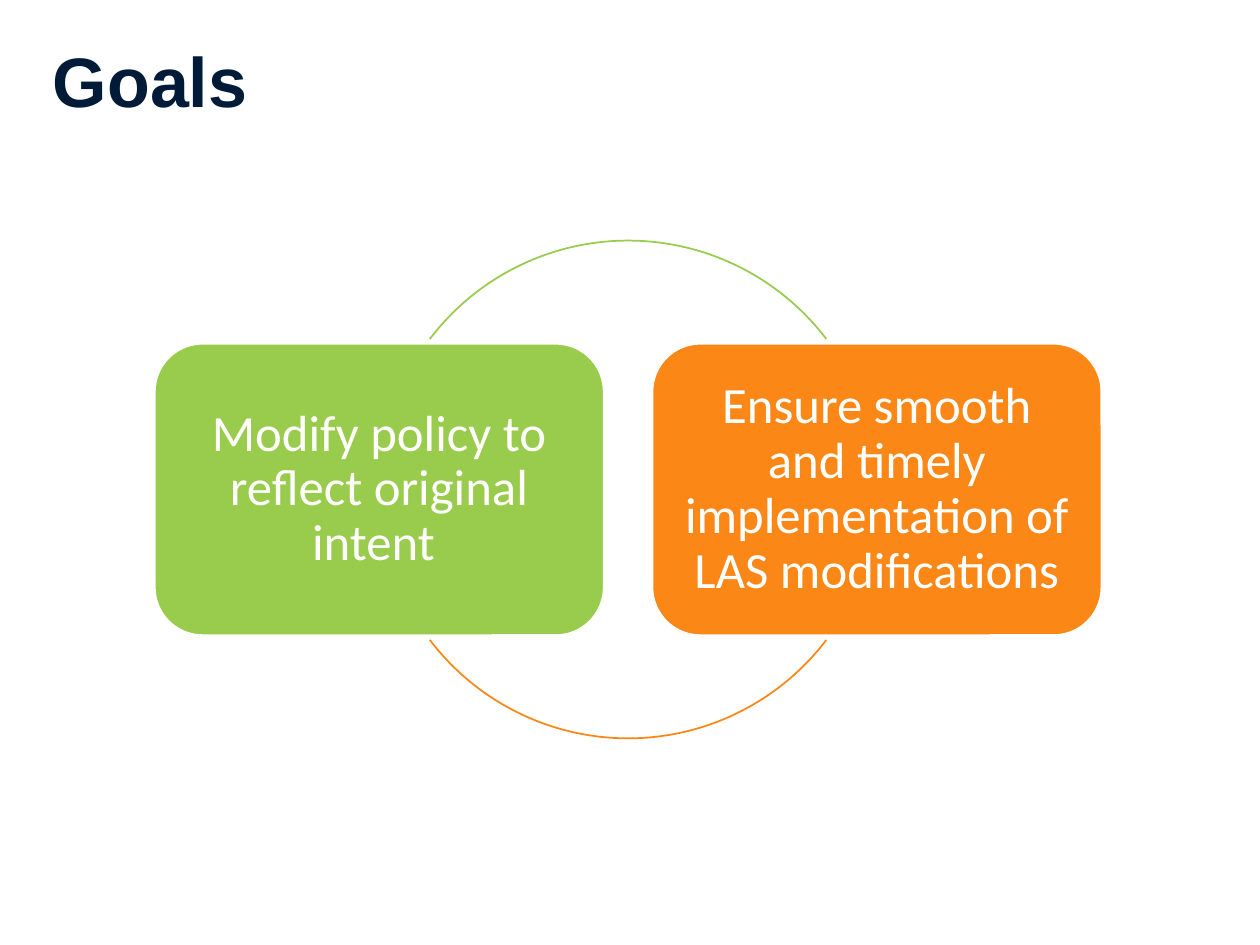
from pptx import Presentation
from pptx.dml.color import RGBColor
from pptx.enum.shapes import MSO_SHAPE
from pptx.enum.text import MSO_ANCHOR, PP_ALIGN
from pptx.util import Inches, Pt

TITLE = "Goals"
# text, colour, start and end angle of the arc in degrees, clockwise from the right
GOALS = [
    ("Modify policy to reflect original intent ", "green", 217.2, 322.8),
    ("Ensure smooth and timely implementation of LAS modifications", "orange", 37.2, 142.8),
]
THEME = {
    "green": RGBColor.from_string("99CC4C"),
    "orange": RGBColor.from_string("FA8716"),
    "navy": RGBColor.from_string("001B37"),
    "white": RGBColor.from_string("FFFFFF"),
    "title_font": "Arial", "title_size": Pt(40),
    "body_font": "Calibri", "body_size": Pt(29),
}
CENTER_X, CENTER_Y = 4.985, 3.885
DIAMETER = 3.95
BOX_W, BOX_H, BOX_GAP = 3.58, 2.33, 0.37
INSET = Inches(0.12)


def style_font(font, role, color, bold=False):
    font.name = THEME[f"{role}_font"]
    font.size = THEME[f"{role}_size"]
    font.color.rgb = THEME[color]
    font.bold = bold


def add_title(slide):
    sp = slide.shapes.title
    sp.left, sp.top, sp.width, sp.height = map(Inches, (0.32, 0.17, 9.56, 0.93))
    tf = sp.text_frame
    tf.text = TITLE
    tf.vertical_anchor = MSO_ANCHOR.MIDDLE
    p = tf.paragraphs[0]
    p.alignment = PP_ALIGN.LEFT
    style_font(p.runs[0].font, "title", "navy", bold=True)


def add_goal_box(slide, index, text, color):
    left = CENTER_X - BOX_W - BOX_GAP / 2 + index * (BOX_W + BOX_GAP)
    sp = slide.shapes.add_shape(
        MSO_SHAPE.ROUNDED_RECTANGLE, Inches(left), Inches(CENTER_Y - BOX_H / 2),
        Inches(BOX_W), Inches(BOX_H))
    sp.shadow.inherit = False
    sp.fill.solid()
    sp.fill.fore_color.rgb = THEME[color]
    sp.line.color.rgb = THEME["white"]
    sp.line.width = Pt(2.25)
    tf = sp.text_frame
    tf.text = text
    tf.word_wrap = True
    tf.vertical_anchor = MSO_ANCHOR.MIDDLE
    tf.margin_left = tf.margin_right = tf.margin_top = tf.margin_bottom = INSET
    p = tf.paragraphs[0]
    p.alignment = PP_ALIGN.CENTER
    p.line_spacing = 0.9
    style_font(p.runs[0].font, "body", "white")


def add_cycle_arc(slide, color, start, end):
    sp = slide.shapes.add_shape(
        MSO_SHAPE.ARC, Inches(CENTER_X - DIAMETER / 2), Inches(CENTER_Y - DIAMETER / 2),
        Inches(DIAMETER), Inches(DIAMETER))
    # Angles are stored in 60000ths of a degree; adjustments are scaled by 100000
    for i, angle in enumerate((start, end)):
        sp.adjustments[i] = angle * 0.6
    sp.shadow.inherit = False
    sp.fill.background()
    sp.line.color.rgb = THEME[color]
    sp.line.width = Pt(1)


def main():
    prs = Presentation()
    prs.slide_width, prs.slide_height = Inches(10), Inches(7.5)
    slide = prs.slides.add_slide(prs.slide_layouts[5])
    add_title(slide)
    for index, (text, color, start, end) in enumerate(GOALS):
        add_goal_box(slide, index, text, color)
        add_cycle_arc(slide, color, start, end)
    prs.save("out.pptx")


if __name__ == "__main__":
    main()
